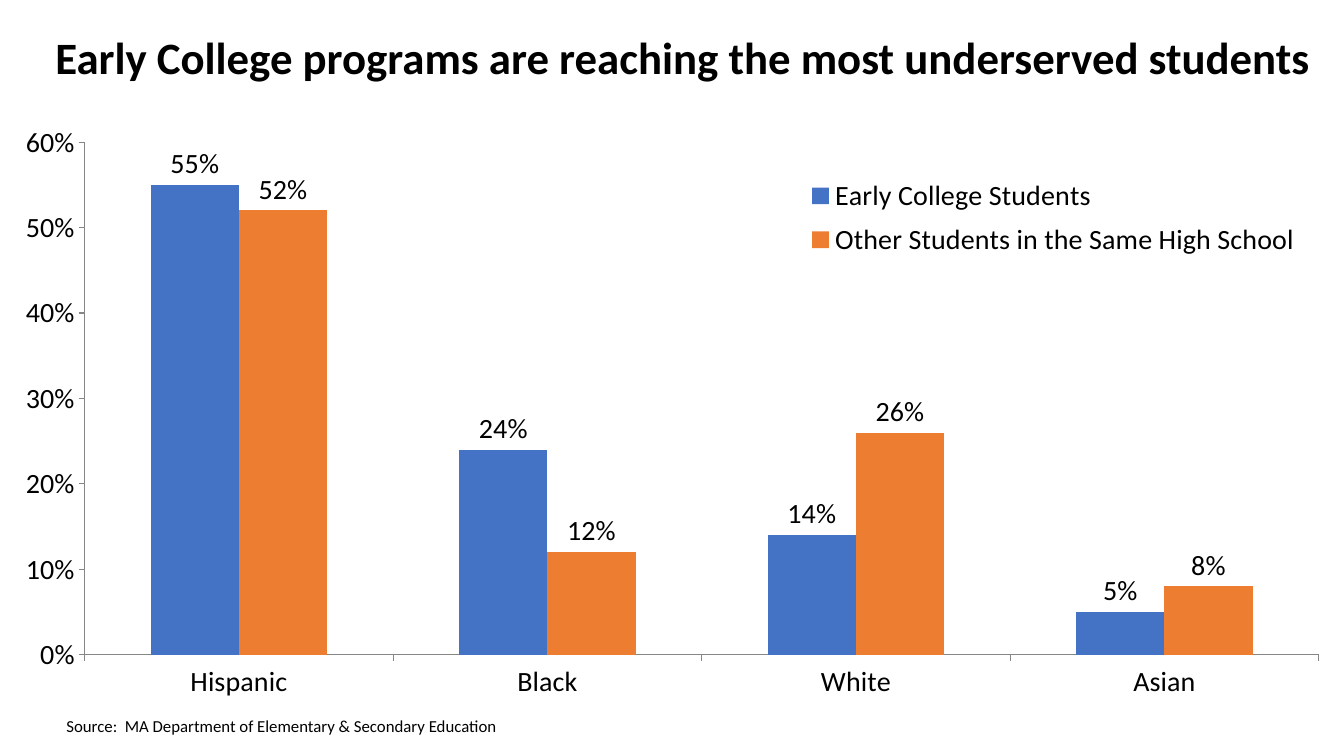
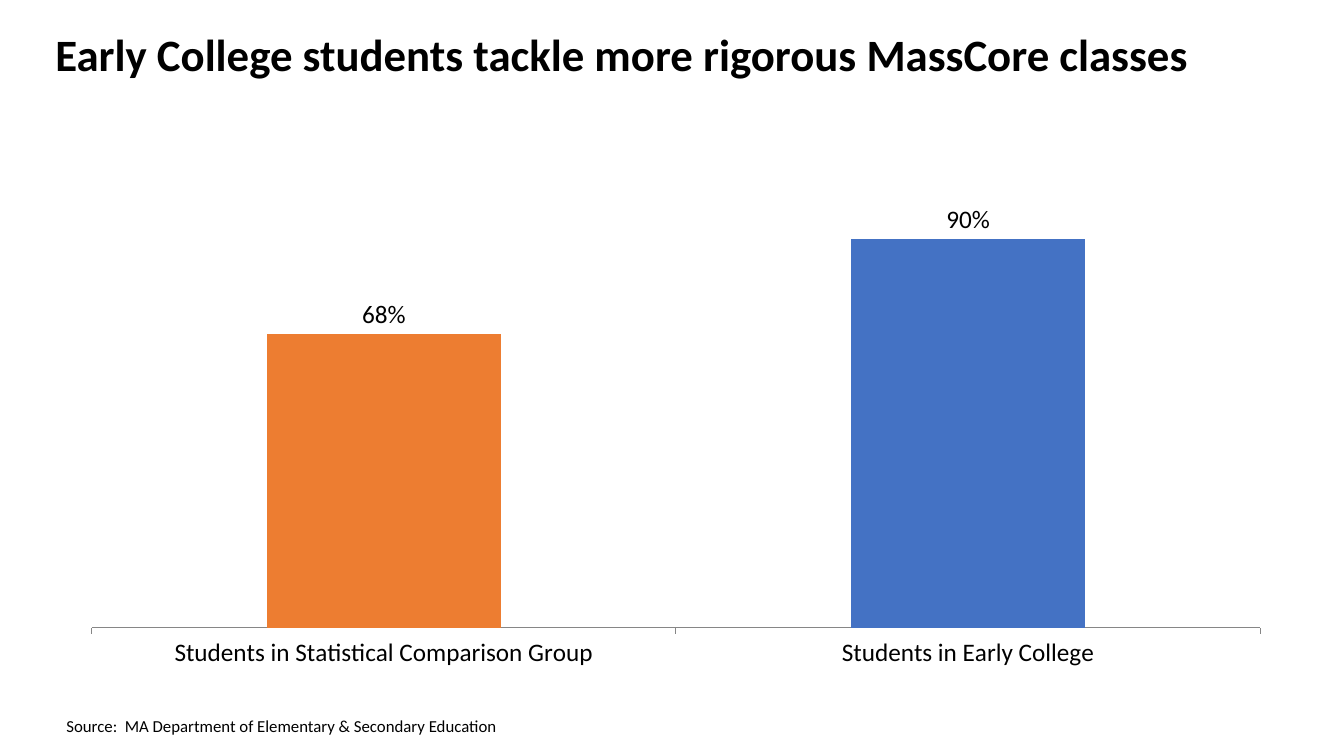
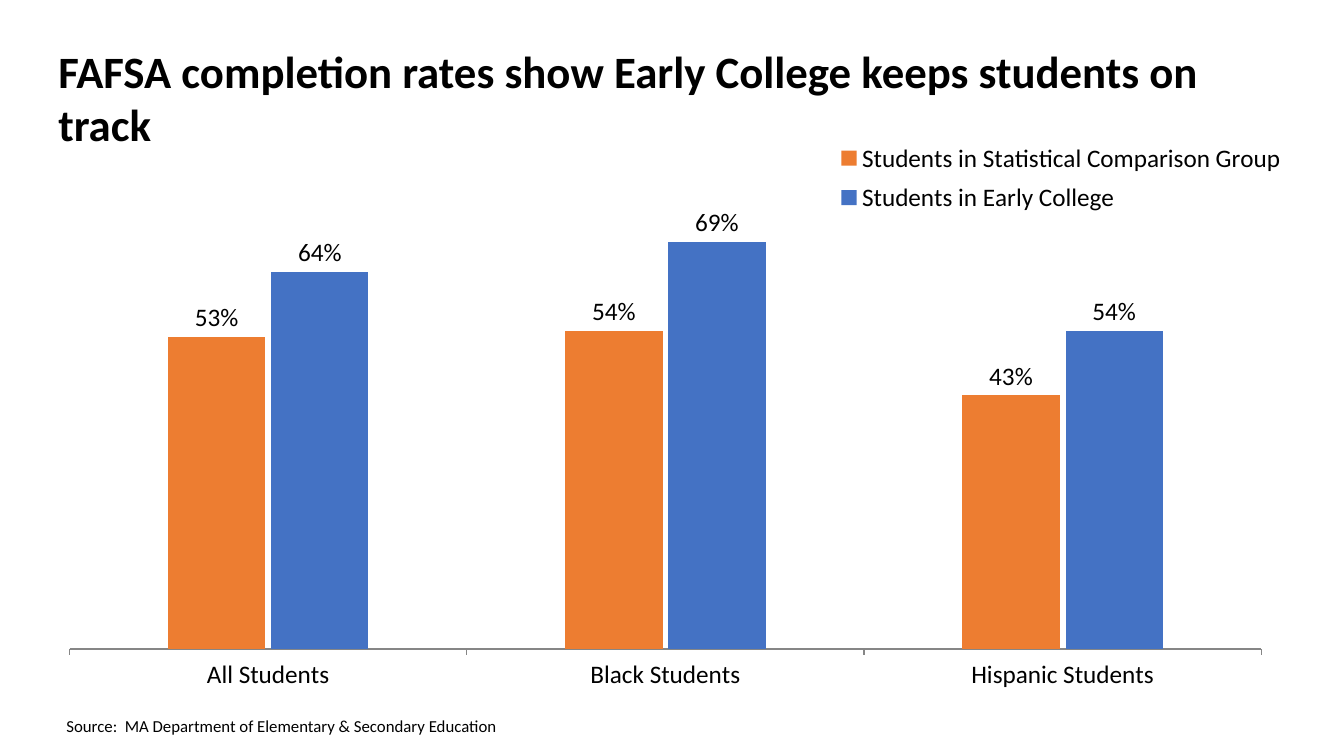
from lxml import etree
from pptx import Presentation
from pptx.chart.data import CategoryChartData
from pptx.dml.color import RGBColor
from pptx.enum import chart as kinds, text as kinds_text
from pptx.oxml import ns
from pptx.util import Inches, Pt

FONT = "Calibri"
HUES = {"ink": "000000", "page": "FFFFFF", "axis": "868686",
        "blue": "4472C4", "orange": "ED7D31"}
SOURCE = "Source:  MA Department of Elementary & Secondary Education"
GROUP, EARLY = "Students in Statistical Comparison Group", "Students in Early College"


def paint(fill, hue):
    """Fill with one colour of the palette."""
    fill.solid()
    fill.fore_color.rgb = RGBColor.from_string(HUES[hue])


def style(font, size, bold=False):
    """Set the shared typeface and ink at a given size."""
    font.name, font.size, font.bold = FONT, Pt(size), bold
    font.color.rgb = RGBColor.from_string(HUES["ink"])


def write(slide, words, box, size=12, bold=False, wrap=False):
    """Place one line or block of text in a box."""
    frame = slide.shapes.add_textbox(*map(Inches, box)).text_frame
    frame.word_wrap = wrap
    frame.vertical_anchor = kinds_text.MSO_ANCHOR.TOP
    run = frame.paragraphs[0].add_run()
    run.text = words
    style(run.font, size, bold)


def lay(node, index, area, box, inner=False):
    """Fix a chart part at an area in inches inside the chart box."""
    for old in node.findall(ns.qn("c:layout")):
        node.remove(old)
    layout = etree.Element(ns.qn("c:layout"))
    manual = etree.SubElement(layout, ns.qn("c:manualLayout"))
    parts = [("layoutTarget", "inner")] if inner else []
    parts += [("xMode", "edge"), ("yMode", "edge")]
    sides = (box[2], box[3], box[2], box[3])
    parts += [(key, f"{length / side:.4f}") for key, length, side in zip("xywh", area, sides)]
    for key, value in parts:
        etree.SubElement(manual, ns.qn("c:" + key)).set("val", value)
    node.insert(index, layout)


def trim(axis, size):
    """Give an axis its text, line and ticks."""
    axis.has_major_gridlines = False
    axis.major_tick_mark = kinds.XL_TICK_MARK.OUTSIDE
    axis.minor_tick_mark = kinds.XL_TICK_MARK.NONE
    style(axis.tick_labels.font, size)
    axis.format.line.width = Pt(0.75)
    paint(axis.format.line.fill, "axis")


def draw(slide, box, plot, cats, rows, top, size=18, gap=150, overlap=0,
         scale=False, legend=None, points=()):
    """Draw a column chart whose rows are (name, hue, values)."""
    data = CategoryChartData(number_format="0%")
    data.categories = cats
    for name, _, values in rows:
        data.add_series(name, values)
    chart = slide.shapes.add_chart(
        kinds.XL_CHART_TYPE.COLUMN_CLUSTERED, *map(Inches, box), data).chart
    style(chart.font, 10)
    chart.has_title = False
    trim(chart.category_axis, size)
    axis = chart.value_axis
    trim(axis, size)
    axis.minimum_scale, axis.maximum_scale, axis.major_unit = 0, top, 0.1
    axis.tick_labels.number_format = "0%"
    axis.tick_labels.number_format_is_linked = False
    axis.visible = scale
    bars = chart.plots[0]
    bars.gap_width, bars.overlap, bars.vary_by_categories = gap, overlap, False
    for series, (_, hue, _) in zip(bars.series, rows):
        series.invert_if_negative = False
        paint(series.format.fill, hue)
        labels = series.data_labels
        labels.show_value = True
        labels.number_format, labels.number_format_is_linked = "0%", False
        labels.position = kinds.XL_LABEL_POSITION.OUTSIDE_END
        style(labels.font, size)
    for index, hue in points:
        paint(bars.series[0].points[index].format.fill, hue)
    area = chart.element.find(".//" + ns.qn("c:plotArea"))
    lay(area, 0, plot, box, inner=True)
    chart.has_legend = legend is not None
    if legend:
        key = chart.legend
        key.position = kinds.XL_LEGEND_POSITION.RIGHT
        key.include_in_layout = False
        style(key.font, size)
        lay(area.getparent().find(ns.qn("c:legend")), 1, legend, box)


def page(deck, title, spot, wrap=True, **graph):
    """Add a slide with a chart, a title and the source line."""
    slide = deck.slides.add_slide(deck.slide_layouts[6])
    paint(slide.background.fill, "page")
    draw(slide, **graph)
    write(slide, title, spot, size=32, bold=True, wrap=wrap)
    write(slide, SOURCE, (0.56, 7.05, 4.52, 0.3))


def main():
    """Build and save the deck."""
    deck = Presentation()
    deck.slide_width, deck.slide_height = Inches(13.33), Inches(7.5)
    page(deck, "Early College programs are reaching the most underserved students",
         (0.45, 0.25, 12.76, 0.64), wrap=False,
         box=(0.22, 1.24, 12.93, 5.96), plot=(0.62, 0.13, 12.24, 5.12),
         cats=["Hispanic", "Black", "White", "Asian"],
         rows=[("Early College Students", "blue", (0.55, 0.24, 0.14, 0.05)),
               ("Other Students in the Same High School", "orange",
                (0.52, 0.12, 0.26, 0.08))],
         top=0.6, size=20, scale=True, legend=(7.73, 0.4, 5, 0.97))
    page(deck, "Early College students tackle more rigorous MassCore classes",
         (0.45, 0.22, 11.72, 1.21),
         box=(0.45, 0.31, 12.52, 6.88), plot=(0.46, 1.63, 11.59, 4.29),
         cats=[GROUP, EARLY], rows=[("Series 1", "blue", (0.68, 0.9))],
         top=1, points=[(0, "orange")])
    page(deck, "FAFSA completion rates show Early College keeps students on track",
         (0.48, 0.38, 11.94, 1.72),
         box=(0.44, 0.63, 12.46, 6.31), plot=(0.25, 1.13, 11.82, 4.68),
         cats=["All Students", "Black Students", "Hispanic Students"],
         rows=[(GROUP, "orange", (0.53, 0.54, 0.43)),
               (EARLY, "blue", (0.64, 0.69, 0.54))],
         top=0.8, gap=202, overlap=-6, legend=(7.86, 0.7, 4.45, 0.87))
    deck.save("out.pptx")


if __name__ == "__main__":
    main()
